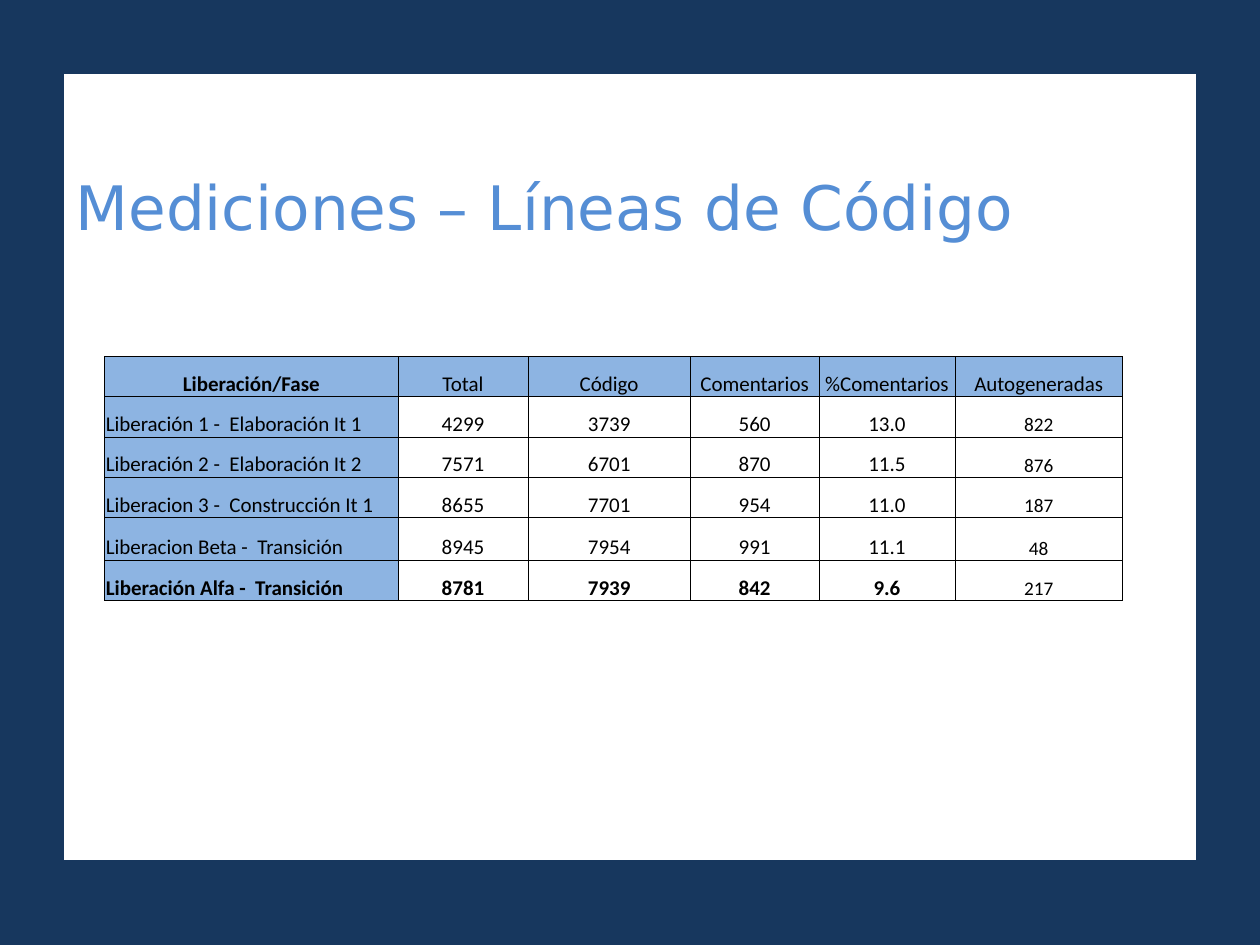
import pptx
import pptx.dml.color
import pptx.enum.text
import pptx.oxml
import pptx.oxml.ns
import pptx.util
from pptx.util import Inches

COLORS = {"navy": "17375E", "paper": "FFFFFF", "heading": "558ED5",
          "label": "8DB4E2", "ink": "000000"}
COLUMN_WIDTHS = [2.33, 1.03, 1.29, 1.02, 1.08, 1.33]
ROW_HEIGHTS = [0.32, 0.32, 0.32, 0.32, 0.34, 0.32]
MEASUREMENTS = [
    ["Liberación/Fase", "Total", "Código", "Comentarios", "%Comentarios", "Autogeneradas"],
    ["Liberación 1 -  Elaboración It 1", "4299", "3739", "560", "13.0", "822"],
    ["Liberación 2 -  Elaboración It 2", "7571", "6701", "870", "11.5", "876"],
    ["Liberacion 3 -  Construcción It 1", "8655", "7701", "954", "11.0", "187"],
    ["Liberacion Beta -  Transición", "8945", "7954", "991", "11.1", "48"],
    ["Liberación Alfa -  Transición", "8781", "7939", "842", "9.6", "217"],
]


def rgb(name):
    """Return the named palette color."""
    return pptx.dml.color.RGBColor.from_string(COLORS[name])


def write_text(frame, text, *, size, font="Calibri", color="ink", bold=False,
               centered=False, anchor="TOP", insets=(0.1, 0.05, 0.1, 0.05)):
    """Write one formatted paragraph into a text frame or table cell."""
    frame.margin_left, frame.margin_top, frame.margin_right, frame.margin_bottom = map(Inches, insets)
    frame.vertical_anchor = pptx.enum.text.MSO_ANCHOR[anchor]
    frame.text = text
    paragraph = getattr(frame, "text_frame", frame).paragraphs[0]
    paragraph.alignment = pptx.enum.text.PP_ALIGN["CENTER" if centered else "LEFT"]
    run = paragraph.runs[0]
    run.font.name = font
    run.font.size = pptx.util.Pt(size)
    run.font.bold = bold
    run.font.color.rgb = rgb(color)


def outline_cell(cell, width=0.5):
    """Draw a thin border on all four sides of a cell."""
    properties = cell._tc.get_or_add_tcPr()
    for side in ("lnL", "lnR", "lnT", "lnB"):
        properties.append(pptx.oxml.parse_xml(
            f'<a:{side} {pptx.oxml.ns.nsdecls("a")} w="{pptx.util.Pt(width)}">'
            f'<a:solidFill><a:srgbClr val="{COLORS["ink"]}"/></a:solidFill></a:{side}>'))


def add_title_panel(slide, text):
    """Turn the title placeholder into the white panel with its heading."""
    panel = slide.shapes.title
    panel.left, panel.top, panel.width, panel.height = map(Inches, (0.5, 0.58, 9, 6.25))
    panel.fill.solid()
    panel.fill.fore_color.rgb = rgb("paper")
    panel.line.color.rgb = rgb("navy")
    panel.line.width = pptx.util.Pt(0.75)
    panel.text_frame.auto_size = pptx.enum.text.MSO_AUTO_SIZE.NONE
    write_text(panel.text_frame, text, size=35, font="DejaVu Sans",
               color="heading", insets=(0.1, 0.76, 0.1, 0.05))


def add_measurements(slide):
    """Add the table of code lines per release."""
    table = slide.shapes.add_table(
        len(MEASUREMENTS), len(COLUMN_WIDTHS), Inches(0.83), Inches(2.83),
        Inches(sum(COLUMN_WIDTHS)), Inches(sum(ROW_HEIGHTS))).table
    table.first_row = table.horz_banding = False
    for column, width in zip(table.columns, COLUMN_WIDTHS):
        column.width = Inches(width)
    for row, height in zip(table.rows, ROW_HEIGHTS):
        row.height = Inches(height)
    last_row, last_column = len(MEASUREMENTS) - 1, len(COLUMN_WIDTHS) - 1
    for r, release in enumerate(MEASUREMENTS):
        for c, value in enumerate(release):
            cell = table.cell(r, c)
            header, generated = r == 0, c == last_column
            outline_cell(cell)
            if header or c == 0:
                cell.fill.solid()
                cell.fill.fore_color.rgb = rgb("label")
            else:
                cell.fill.background()
            write_text(cell, value, size=11 if generated and not header else 12,
                       bold=(header and c == 0) or (r == last_row and not generated),
                       centered=header or c > 0, anchor="BOTTOM",
                       insets=(0.01, 0.01, 0.01, 0))


def main():
    """Build and save the slide."""
    deck = pptx.Presentation()
    deck.slide_width, deck.slide_height = Inches(10), Inches(7.5)
    slide = deck.slides.add_slide(deck.slide_layouts.get_by_name("Title Only"))
    slide.background.fill.solid()
    slide.background.fill.fore_color.rgb = rgb("navy")
    add_title_panel(slide, "Mediciones – Líneas de Código")
    add_measurements(slide)
    deck.save("out.pptx")


if __name__ == "__main__":
    main()
